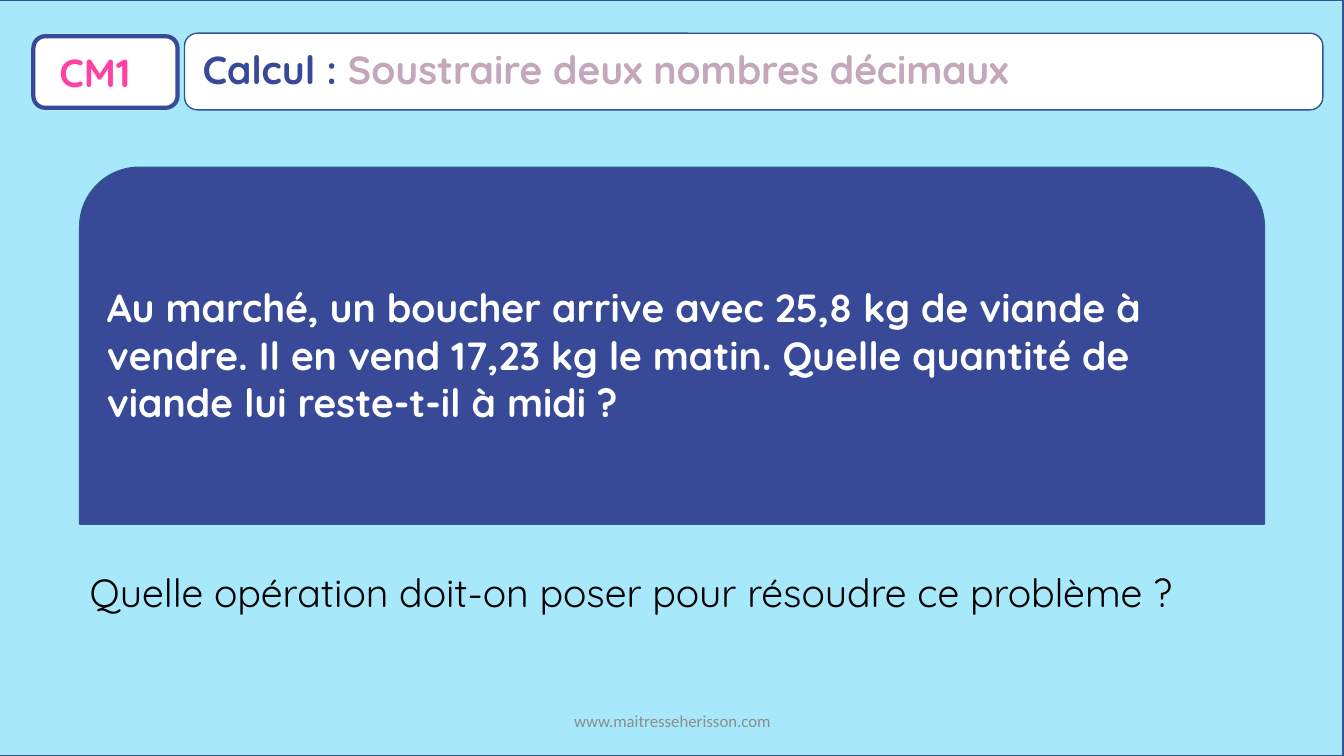
"""Build a maths problem slide about subtracting decimal numbers."""
from typing import NamedTuple

from pptx import Presentation
from pptx import util as u
from pptx.dml.color import RGBColor
from pptx.enum import shapes, text

WIDTH, HEIGHT = u.Inches(13.33), u.Inches(7.5)
NAVY, EDGE, WHITE = "374997", "325491", "FFFFFF"
SHAPE = shapes.MSO_SHAPE


class Area(NamedTuple):
    """Left, top, width and height in percent of the slide's size."""
    left: float
    top: float
    width: float
    height: float

    def lengths(self) -> list[int]:
        """Return the area in slide units."""
        return [round(share * side / 100)
                for share, side in zip(self, (WIDTH, HEIGHT) * 2)]


class Panel(NamedTuple):
    """A filled and outlined shape."""
    area: Area
    kind: SHAPE
    fill: str
    line: str = EDGE
    line_width: float = 1


class Run(NamedTuple):
    """A piece of text in one colour."""
    words: str
    color: str


class Label(NamedTuple):
    """A text box and its format."""
    area: Area
    runs: list[Run]
    style: dict


BACKGROUND = Panel(Area(-0.08, 0, 100, 100), SHAPE.RECTANGLE, "A7E8FB")
LEVEL_FRAME = Panel(Area(2.48, 4.8, 10.73, 9.47), SHAPE.ROUNDED_RECTANGLE, WHITE, NAVY, 3)
TITLE_FRAME = Panel(Area(13.73, 4.4, 84.7, 10.13), SHAPE.ROUNDED_RECTANGLE, WHITE)
PROBLEM = Panel(Area(5.93, 22.13, 88.15, 47.2), SHAPE.ROUND_2_SAME_RECTANGLE, NAVY)
PROBLEM_TEXT = ("Au marché, un boucher arrive avec 25,8 kg de viande à vendre. "
                "Il en vend 17,23 kg le matin. Quelle quantité de viande lui "
                "reste-t-il à midi ?")

LABELS = [
    Label(Area(3.68, 5.73, 8.25, 7.6), [Run("CM1", "FF41A5")], {"bold": True}),
    Label(Area(14.33, 5.33, 82.07, 7.6),
          [Run("Calcul : ", NAVY), Run("Soustraire deux nombres décimaux", "C3A7BA")],
          {"bold": True}),
    Label(Area(5.93, 74.53, 90.47, 7.6),
          [Run("Quelle opération doit-on poser pour résoudre ce problème ?", "000000")], {}),
    Label(Area(33.16, 92.67, 33.76, 5.33), [Run("www.maitresseherisson.com", "8C8C8C")],
          {"size": 12, "font": "Calibri", "align": text.PP_ALIGN.CENTER,
           "anchor": text.MSO_ANCHOR.MIDDLE, "grow": False}),
]


def paint(target, color: str) -> None:
    """Set a fill or font colour from a hex string."""
    target.rgb = RGBColor.from_string(color)


def add_panel(slide, panel: Panel):
    """Draw a panel and return its shape."""
    shape = slide.shapes.add_shape(panel.kind, *panel.area.lengths())
    shape.shadow.inherit = False
    shape.fill.solid()
    paint(shape.fill.fore_color, panel.fill)
    paint(shape.line.color, panel.line)
    shape.line.width = u.Pt(panel.line_width)
    return shape


def write(shape, runs: list[Run], *, size: float = 28, font: str = "Quicksand",
          bold: bool = False, align=text.PP_ALIGN.LEFT,
          anchor=text.MSO_ANCHOR.TOP, grow: bool = True) -> None:
    """Write one formatted paragraph into a shape."""
    frame = shape.text_frame
    frame.word_wrap = True
    frame.vertical_anchor = anchor
    frame.auto_size = (text.MSO_AUTO_SIZE.SHAPE_TO_FIT_TEXT if grow
                       else text.MSO_AUTO_SIZE.NONE)
    paragraph = frame.paragraphs[0]
    paragraph.alignment = align
    for words, color in runs:
        run = paragraph.add_run()
        run.text = words
        run.font.name, run.font.size, run.font.bold = font, u.Pt(size), bold
        paint(run.font.color, color)


def main() -> None:
    """Build and save the slide."""
    presentation = Presentation()
    presentation.slide_width, presentation.slide_height = WIDTH, HEIGHT
    slide = presentation.slides.add_slide(presentation.slide_layouts[6])
    for panel in (BACKGROUND, LEVEL_FRAME, TITLE_FRAME):
        add_panel(slide, panel)
    write(add_panel(slide, PROBLEM), [Run(PROBLEM_TEXT, WHITE)], bold=True,
          anchor=text.MSO_ANCHOR.MIDDLE, grow=False)
    for label in LABELS:
        write(slide.shapes.add_textbox(*label.area.lengths()), label.runs, **label.style)
    presentation.save("out.pptx")


if __name__ == "__main__":
    main()
